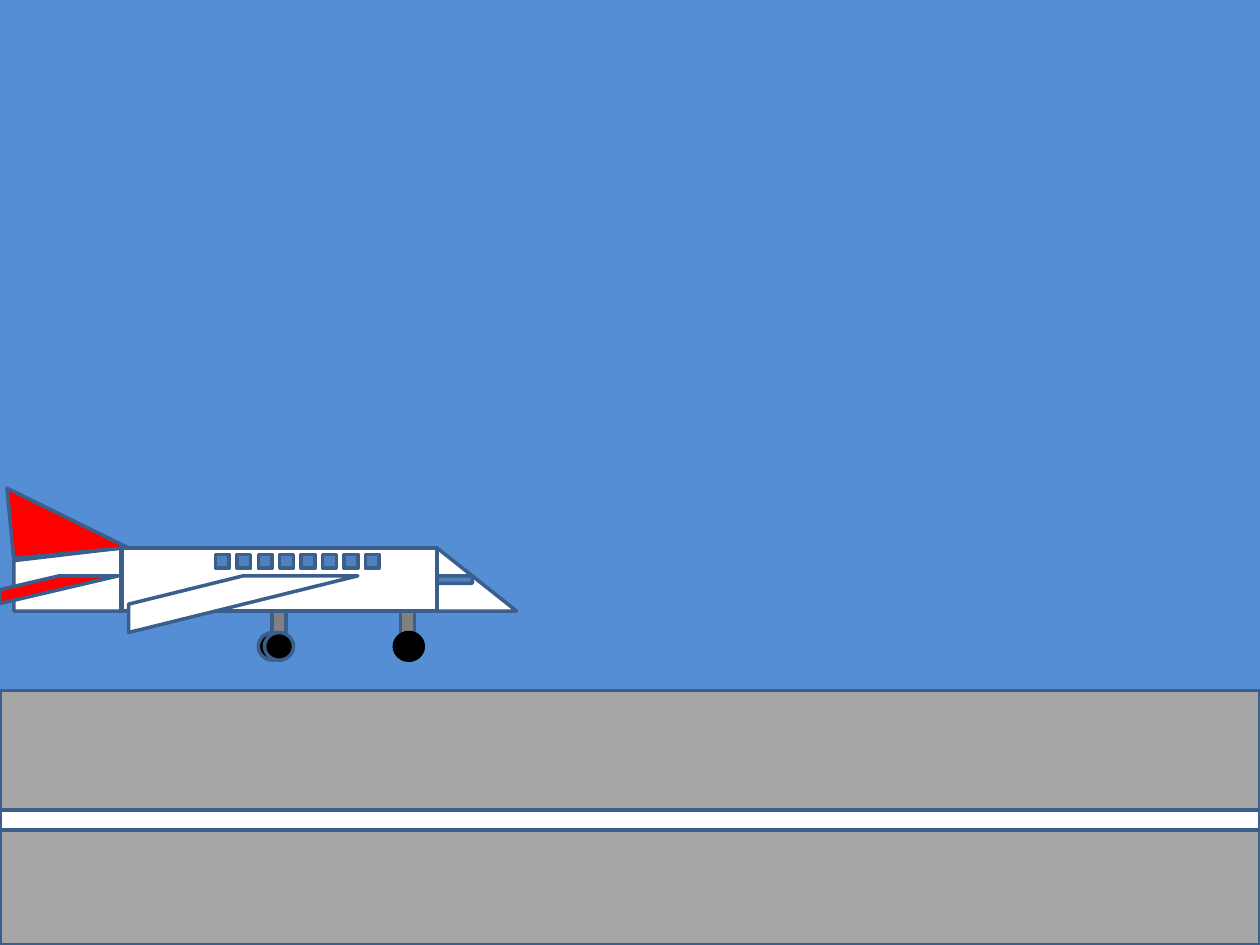
from dataclasses import dataclass

from pptx import Presentation
from pptx.dml.color import RGBColor
from pptx.enum.shapes import MSO_SHAPE
from pptx.shapes.group import GroupShape
from pptx.util import Inches, Pt

RECT = MSO_SHAPE.RECTANGLE
ROUND_RECT = MSO_SHAPE.ROUNDED_RECTANGLE
TRIANGLE = MSO_SHAPE.RIGHT_TRIANGLE
STRIPE = MSO_SHAPE.DIAGONAL_STRIPE
OVAL = MSO_SHAPE.OVAL
SLOPED_BOX = MSO_SHAPE.FLOWCHART_MANUAL_INPUT

SKY = RGBColor(0x55, 0x8E, 0xD5)
TARMAC = RGBColor(0xA6, 0xA6, 0xA6)
WHITE = RGBColor(0xFF, 0xFF, 0xFF)
BLACK = RGBColor(0x00, 0x00, 0x00)
RED = RGBColor(0xFF, 0x00, 0x00)
STRUT_GREY = RGBColor(0x80, 0x80, 0x80)
GLASS = RGBColor(0x4F, 0x81, 0xBD)
OUTLINE = RGBColor(0x3A, 0x5F, 0x8C)

WINDOW_COUNT = 8
WINDOW_LEFT = 1.71
WINDOW_PITCH = 0.17


@dataclass(frozen=True)
class Part:
    """One outlined piece of the scene; lengths are in inches."""
    kind: MSO_SHAPE
    left: float
    top: float
    width: float
    height: float
    fill: RGBColor
    line: RGBColor = OUTLINE
    rotation: float = 0


def strut(left: float) -> Part:
    return Part(RECT, left, 4.85, 0.11, 0.22, STRUT_GREY)


def wheel(left: float, line: RGBColor = OUTLINE) -> Part:
    return Part(OVAL, left, 5.02, 0.23, 0.22, BLACK, line)


def window(index: int) -> Part:
    left = WINDOW_LEFT + index * WINDOW_PITCH
    return Part(RECT, left, 4.4, 0.11, 0.11, GLASS)


def draw_part(group: GroupShape, part: Part) -> None:
    shape = group.shapes.add_shape(
        part.kind, Inches(part.left), Inches(part.top),
        Inches(part.width), Inches(part.height))
    shape.rotation = part.rotation
    shape.shadow.inherit = False
    shape.fill.solid()
    shape.fill.fore_color.rgb = part.fill
    shape.line.color.rgb = part.line
    shape.line.width = Pt(2)


RUNWAY = [
    Part(RECT, 0, 5.48, 10, 2.02, TARMAC),
    Part(RECT, 0, 6.43, 10, 0.16, WHITE),
]

AIRPLANE = [
    # Fuselage, nose and wing
    Part(RECT, 0.97, 4.35, 2.5, 0.5, WHITE),
    Part(TRIANGLE, 3.47, 4.35, 0.63, 0.5, WHITE),
    Part(STRIPE, 1.02, 4.57, 1.82, 0.45, WHITE),
    # Landing gear
    strut(3.18),
    wheel(3.13, BLACK),
    strut(2.16),
    wheel(2.05),
    wheel(2.1),
    # Tail section and fin
    Part(SLOPED_BOX, 0.11, 4.35, 0.85, 0.5, WHITE),
    Part(TRIANGLE, 0.08, 3.83, 0.91, 0.56, RED, rotation=354.6),
    # Cabin windows, cockpit window and tailplane
    *(window(index) for index in range(WINDOW_COUNT)),
    Part(ROUND_RECT, 3.47, 4.57, 0.28, 0.06, GLASS),
    Part(STRIPE, 0, 4.57, 0.94, 0.22, RED),
]


def main() -> None:
    presentation = Presentation()
    presentation.slide_width = Inches(10)
    presentation.slide_height = Inches(7.5)
    slide = presentation.slides.add_slide(presentation.slide_layouts[6])

    # Sky
    slide.background.fill.solid()
    slide.background.fill.fore_color.rgb = SKY

    # Runway first, airplane in front
    for parts in (RUNWAY, AIRPLANE):
        group = slide.shapes.add_group_shape()
        for part in parts:
            draw_part(group, part)

    presentation.save("out.pptx")


if __name__ == "__main__":
    main()
